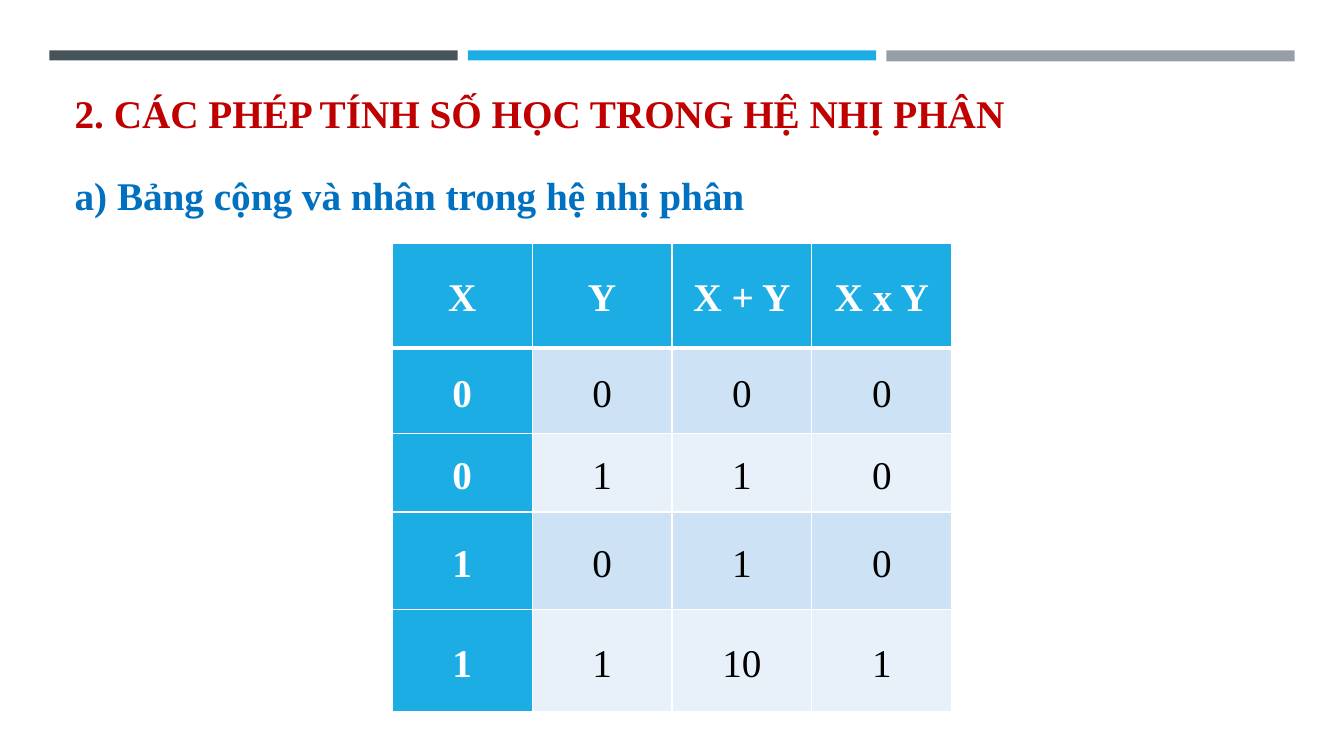
from pptx import Presentation
from pptx.dml.color import RGBColor
from pptx.enum.shapes import MSO_SHAPE as Shape
from pptx.enum.text import MSO_ANCHOR as Anchor, MSO_AUTO_SIZE as AutoSize, PP_ALIGN as Align
from pptx.oxml.ns import qn
from pptx.util import Inches, Pt
from lxml.etree import SubElement

COLORS = {
    "slate": "465359", "blue": "1CADE4", "gray": "969FA7",
    "title": "C00000", "subtitle": "0070C0",
    "white": "FFFFFF", "black": "000000",
    "dark_band": "CDE3F5", "light_band": "E8F1FA",
}
FONT = "Times New Roman"
TITLE = "2. CÁC PHÉP TÍNH SỐ HỌC TRONG HỆ NHỊ PHÂN"
SUBTITLE = "a) Bảng cộng và nhân trong hệ nhị phân"
BARS = [("slate", 0.1), ("blue", 0.1), ("gray", 0.11)]
ROWS = [
    ("X", "Y", "X + Y", "X x Y"),
    ("0", "0", "0", "0"),
    ("0", "1", "1", "0"),
    ("1", "0", "1", "0"),
    ("1", "1", "10", "1"),
]
ROW_HEIGHTS = [1.04, 0.85, 0.78, 0.97, 1.01]
TABLE_LEFT, TABLE_TOP, TABLE_WIDTH = 3.89, 2.41, 5.55
BAR_LEFT, BAR_TOP, BAR_WIDTH, BAR_STEP = 0.49, 0.5, 4.05, 4.15


def color(name):
    return RGBColor.from_string(COLORS[name])


def add_text(paragraph, text, color_name, bold):
    run = paragraph.add_run()
    run.text = text
    run.font.name = FONT
    run.font.size = Pt(28)
    run.font.bold = bold
    run.font.color.rgb = color(color_name)


def fill_placeholder(shape, top, text, color_name, anchor):
    shape.left, shape.top = Inches(0.64), Inches(top)
    shape.width, shape.height = Inches(12.06), Inches(0.63)
    frame = shape.text_frame
    frame.word_wrap = True
    frame.auto_size = AutoSize.NONE
    frame.vertical_anchor = anchor
    paragraph = frame.paragraphs[0]
    paragraph.alignment = Align.LEFT
    add_text(paragraph, text, color_name, True)
    return paragraph


def add_borders(cell, widths):
    properties = cell._tc.get_or_add_tcPr()
    for side, width in widths.items():
        line = SubElement(properties, qn(f"a:ln{side}"), w=str(Pt(width)))
        solid = SubElement(line, qn("a:solidFill"))
        SubElement(solid, qn("a:srgbClr"), val=COLORS["white"])


def add_bars(slide):
    for index, (color_name, height) in enumerate(BARS):
        bar = slide.shapes.add_shape(
            Shape.RECTANGLE, Inches(BAR_LEFT + index * BAR_STEP), Inches(BAR_TOP),
            Inches(BAR_WIDTH), Inches(height))
        bar.shadow.inherit = False
        bar.fill.solid()
        bar.fill.fore_color.rgb = color(color_name)
        bar.line.fill.background()


def format_cell(cell, text, row, column):
    heading = row == 0 or column == 0
    band = "dark_band" if row % 2 else "light_band"
    add_borders(cell, {"L": 1, "R": 1, "T": 3 if row == 1 else 1, "B": 3 if row == 0 else 1})
    cell.fill.solid()
    cell.fill.fore_color.rgb = color("blue" if heading else band)
    cell.vertical_anchor = Anchor.MIDDLE
    cell.margin_left = cell.margin_right = Inches(0.07)
    cell.margin_top = cell.margin_bottom = 0
    paragraph = cell.text_frame.paragraphs[0]
    paragraph.alignment = Align.CENTER
    paragraph.line_spacing = 1.15
    add_text(paragraph, text, "white" if heading else "black", heading)


def add_arithmetic_table(slide):
    table = slide.shapes.add_table(
        len(ROWS), len(ROWS[0]), Inches(TABLE_LEFT), Inches(TABLE_TOP),
        Inches(TABLE_WIDTH), Inches(sum(ROW_HEIGHTS))).table
    table.first_col = True
    for column in table.columns:
        column.width = Inches(TABLE_WIDTH / len(ROWS[0]))
    for row, (height, texts) in enumerate(zip(ROW_HEIGHTS, ROWS)):
        table.rows[row].height = Inches(height)
        for column, text in enumerate(texts):
            format_cell(table.cell(row, column), text, row, column)


def main():
    presentation = Presentation()
    presentation.slide_width, presentation.slide_height = Inches(13.33), Inches(7.5)
    slide = presentation.slides.add_slide(presentation.slide_layouts[1])
    add_bars(slide)
    fill_placeholder(slide.shapes.title, 0.77, TITLE, "title", Anchor.BOTTOM)
    subtitle = fill_placeholder(slide.placeholders[1], 1.59, SUBTITLE, "subtitle", Anchor.MIDDLE)
    subtitle.line_spacing = 1.1
    subtitle.space_before = subtitle.space_after = Pt(6)
    properties = subtitle._p.get_or_add_pPr()
    properties.set("marL", "0")
    properties.set("indent", "0")
    SubElement(properties, qn("a:buNone"))
    add_arithmetic_table(slide)
    presentation.save("out.pptx")


if __name__ == "__main__":
    main()
